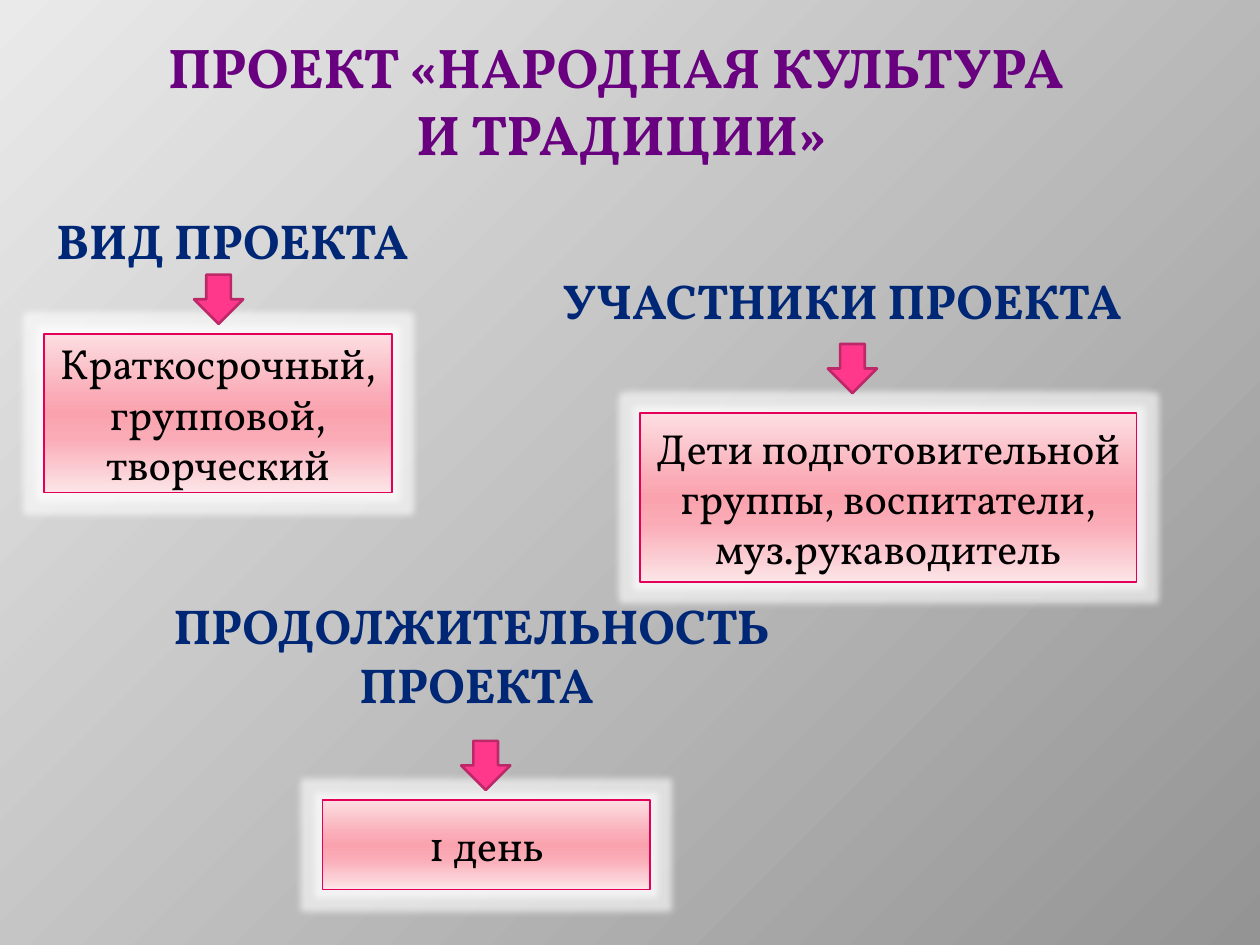
import pptx
import pptx.util
import pptx.dml.color
import pptx.enum.shapes
import pptx.enum.text
import pptx.oxml.ns
from lxml import etree

Inches = pptx.util.Inches
Pt = pptx.util.Pt
ALIGN = pptx.enum.text.PP_ALIGN
ANCHOR = pptx.enum.text.MSO_ANCHOR
SHAPE = pptx.enum.shapes.MSO_SHAPE
qn = pptx.oxml.ns.qn

FONT = "Vollkorn"
ARROW = 0.39
COLORS = {
    "title": "68007F",
    "heading": "002776",
    "outline": "4D005E",
    "text": "000000",
    "box_line": "E40059",
    "glow": "FFFFFF",
    "arrow": "FF388C",
    "arrow_line": "BD2968",
}
BACK_STOPS = [(0, "EAEAEA"), (100, "949494")]
BOX_STOPS = [(0, "FCDEE2"), (40, "FAABB6"), (50, "FAA3AF"), (65, "FAABB6"), (100, "FCE5E8")]


def rgb(name):
    return pptx.dml.color.RGBColor.from_string(COLORS[name])


def sub(parent, tag, **attrs):
    return etree.SubElement(parent, qn(tag), attrs)


def set_gradient(fill, parent, stops, radial=False):
    fill.solid()
    grad = etree.Element(qn("a:gradFill"), rotWithShape="1")
    gs_lst = sub(grad, "a:gsLst")
    for pos, color in stops:
        gs = sub(gs_lst, "a:gs", pos=str(pos * 1000))
        sub(gs, "a:srgbClr", val=color)
    if radial:
        path = sub(grad, "a:path", path="circle")
        sub(path, "a:fillToRect", r="100000", b="100000")
    else:
        sub(grad, "a:lin", ang="5400000", scaled="0")
    parent.replace(parent.find(qn("a:solidFill")), grad)


def add_run(p, text, size, color, bold=False):
    r = p.add_run()
    r.text = text
    r.font.name = FONT
    r.font.size = Pt(size)
    r.font.bold = bold
    r.font.color.rgb = rgb(color)
    return r


def add_outline(r):
    ln = etree.Element(qn("a:ln"), w=str(Pt(0.71)))
    sub(sub(ln, "a:solidFill"), "a:srgbClr", val=COLORS["outline"])
    r.font._element.insert(0, ln)


def write_lines(sp, lines, size, color):
    tf = sp.text_frame
    tf.word_wrap = False
    tf.auto_size = pptx.enum.text.MSO_AUTO_SIZE.SHAPE_TO_FIT_TEXT
    tf.vertical_anchor = ANCHOR.TOP
    for i, (text, align) in enumerate(lines):
        p = tf.add_paragraph() if i else tf.paragraphs[0]
        p.alignment = align
        add_outline(add_run(p, text, size, color, bold=True))


def add_title(s, x, y, w, h, lines):
    sp = s.shapes.title
    sp.left, sp.top, sp.width, sp.height = map(Inches, (x, y, w, h))
    write_lines(sp, [(line, ALIGN.CENTER) for line in lines], 32, "title")


def add_heading(s, x, y, w, h, lines):
    sp = s.shapes.add_textbox(*map(Inches, (x, y, w, h)))
    write_lines(sp, lines, 28, "heading")


def add_box(s, x, y, w, h, text):
    sp = s.shapes.add_shape(SHAPE.RECTANGLE, *map(Inches, (x, y, w, h)))
    sp.shadow.inherit = False
    spPr = sp._element.spPr
    set_gradient(sp.fill, spPr, BOX_STOPS)
    sp.line.color.rgb = rgb("box_line")
    sp.line.width = Pt(0.94)
    glow = sub(spPr.find(qn("a:effectLst")), "a:glow", rad=str(Pt(8)))
    sub(sub(glow, "a:srgbClr", val=COLORS["glow"]), "a:alpha", val="60000")
    tf = sp.text_frame
    tf.word_wrap = True
    tf.vertical_anchor = ANCHOR.MIDDLE
    p = tf.paragraphs[0]
    p.alignment = ALIGN.CENTER
    add_run(p, text, 24, "text")


def add_arrow(s, x, y):
    sp = s.shapes.add_shape(SHAPE.DOWN_ARROW, *map(Inches, (x, y, ARROW, ARROW)))
    sp.shadow.inherit = False
    sp.fill.solid()
    sp.fill.fore_color.rgb = rgb("arrow")
    sp.line.color.rgb = rgb("arrow_line")
    sp.line.width = Pt(1.5)


def main():
    prs = pptx.Presentation()
    prs.slide_width, prs.slide_height = Inches(10), Inches(7.5)
    s = prs.slides.add_slide(prs.slide_layouts[5])
    fill = s.background.fill
    fill.solid()
    set_gradient(fill, s._element.find(".//" + qn("p:bgPr")), BACK_STOPS, radial=True)

    add_title(s, 1.14, 0.21, 7.59, 1.18, ["ПРОЕКТ «НАРОДНАЯ КУЛЬТУРА ", "И ТРАДИЦИИ»"])

    add_heading(s, 0.35, 1.62, 3.06, 0.57, [("ВИД ПРОЕКТА", ALIGN.LEFT)])
    add_box(s, 0.35, 2.65, 2.76, 1.26, "Краткосрочный, групповой, творческий")
    add_arrow(s, 1.54, 2.18)

    add_heading(s, 4.37, 2.1, 4.8, 0.57, [("УЧАСТНИКИ ПРОЕКТА", ALIGN.LEFT)])
    add_box(s, 5.08, 3.28, 3.94, 1.34,
            "Дети подготовительной группы, воспитатели, муз.рукаводитель")
    add_arrow(s, 6.57, 2.73)

    add_heading(s, 1.28, 4.68, 5.06, 1.04,
                [("ПРОДОЛЖИТЕЛЬНОСТЬ", ALIGN.LEFT), (" ПРОЕКТА", ALIGN.CENTER)])
    add_box(s, 2.56, 6.35, 2.6, 0.71, "1 день")
    add_arrow(s, 3.66, 5.88)

    prs.save("out.pptx")


if __name__ == "__main__":
    main()
